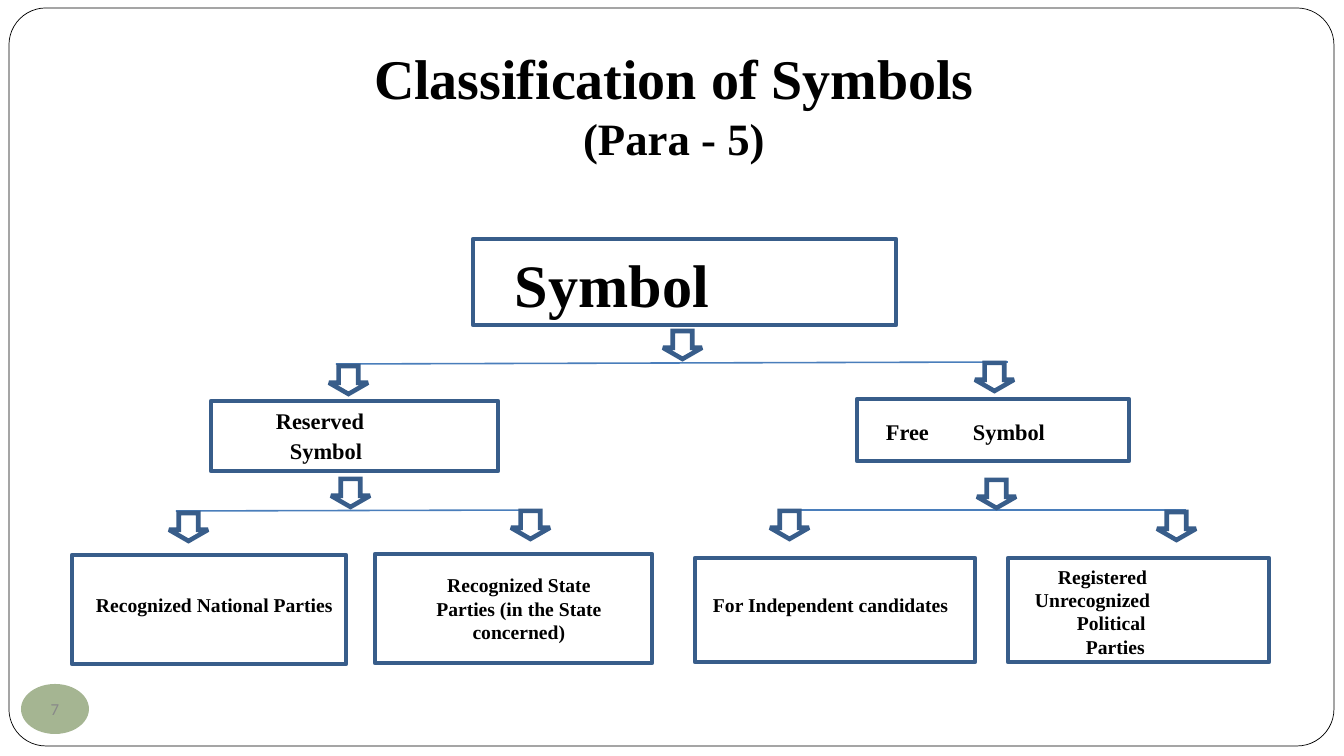
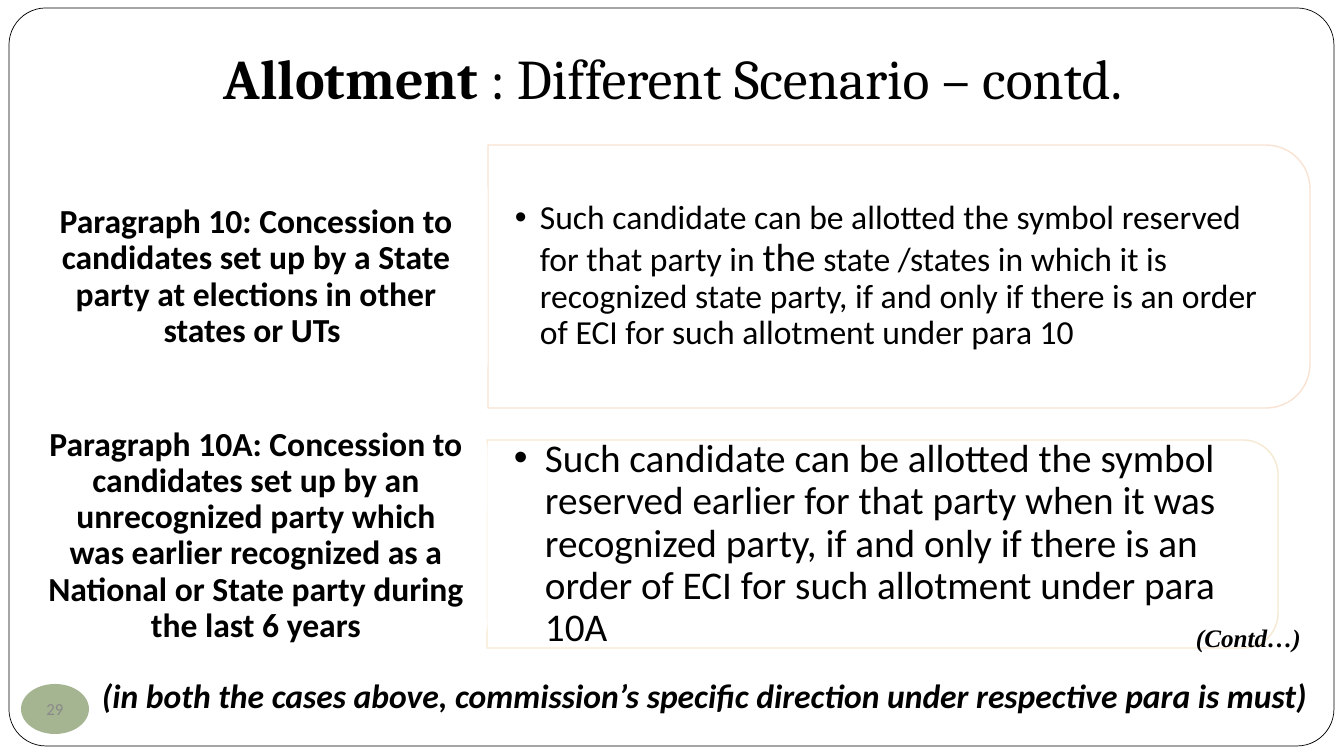
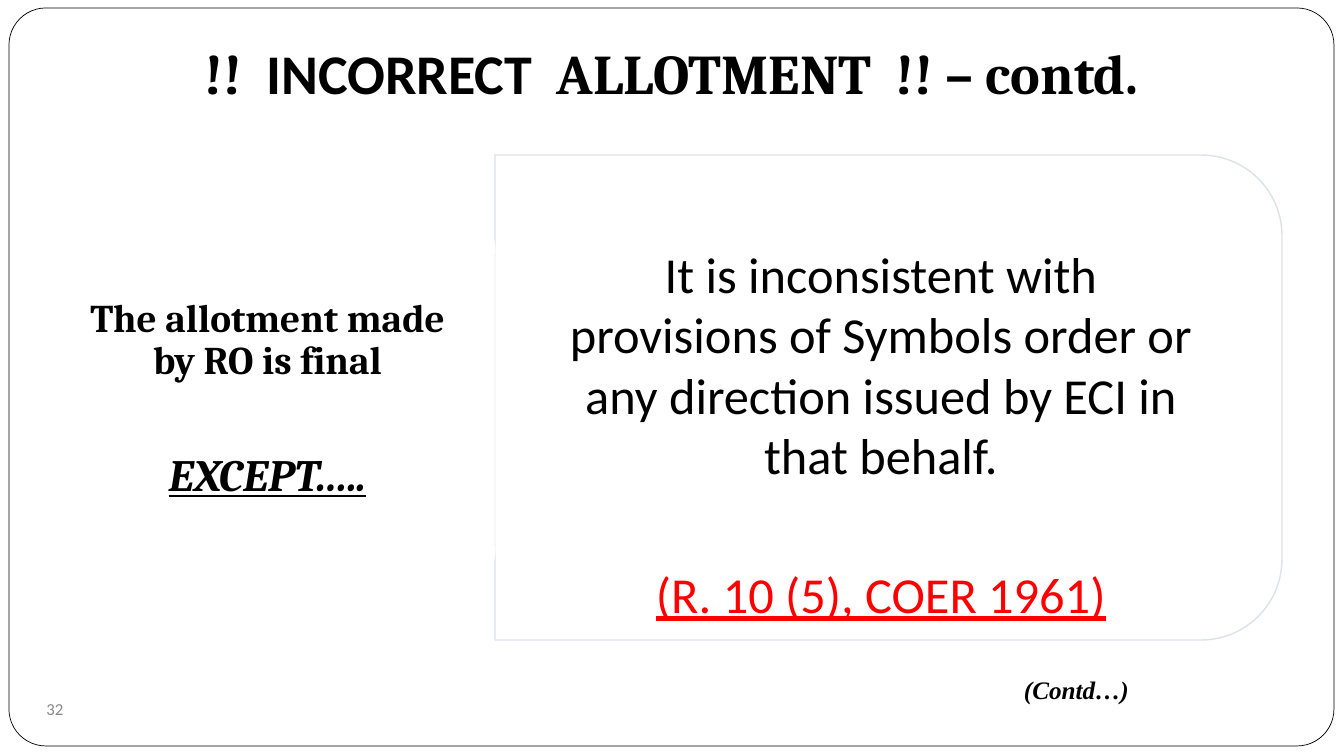
"""Build three slides on the classification and allotment of election symbols."""

from dataclasses import dataclass
from typing import NamedTuple, Optional

from lxml.etree import SubElement
from pptx import Presentation
from pptx.dml.color import RGBColor
from pptx.enum.shapes import MSO_CONNECTOR, MSO_SHAPE
from pptx.enum.text import MSO_ANCHOR, MSO_AUTO_SIZE, PP_ALIGN
from pptx.oxml.ns import qn
from pptx.shapes.autoshape import Shape
from pptx.slide import Slide
from pptx.text.text import TextFrame
from pptx.util import Emu, Pt

EMU_PER_PX = 914400 / 100.8


@dataclass(frozen=True)
class Theme:
    text: str = "000000"
    accent: str = "FF0000"
    number: str = "898989"
    badge: str = "A5B592"
    white: str = "FFFFFF"
    node_line: str = "385D8A"
    branch_line: str = "4A7EBB"
    serif: str = "Times New Roman"
    heading: str = "Cambria"
    body: str = "Calibri"
    title_size: int = 40
    subtitle_size: int = 32
    root_size: int = 43
    statement_size: int = 36
    emphasis_size: int = 32
    large_size: int = 28
    body_size: int = 24
    continued_size: int = 18
    branch_size: int = 16
    leaf_size: int = 14
    number_size: int = 12
    node_width: float = 3.25
    branch_width: float = 1.13
    frame_width: float = 0.5
    panel_width: float = 1


THEME = Theme()


class Box(NamedTuple):
    left: int
    top: int
    width: int
    height: int


class Insets(NamedTuple):
    left: int = 10
    top: int = 5
    right: int = 10
    bottom: int = 5


class Run(NamedTuple):
    text: str
    size: int
    font: str = THEME.body
    bold: bool = False
    italic: bool = False
    underline: bool = False
    color: str = THEME.text


@dataclass(frozen=True)
class Block:
    runs: tuple[Run, ...]
    align: PP_ALIGN = PP_ALIGN.LEFT
    line_spacing: float = 1.0
    before: int = 0
    bullet_indent: int = 0


class Label(NamedTuple):
    text: str
    box: Box
    size: int
    align: PP_ALIGN = PP_ALIGN.LEFT


class Branch(NamedTuple):
    start_x: int
    start_y: int
    end_x: int
    end_y: int


class Scenario(NamedTuple):
    label: str
    label_box: Box
    panel_box: Box
    panel_line: str
    text_box: Box
    indent: int
    runs: tuple[Run, ...]


NO_INSETS = Insets(0, 0, 0, 0)
TITLE_INSETS = Insets(bottom=10)
PANEL_INSETS = Insets(27, 14, 27, 14)
FRAME_BOX = Box(9, 8, 1325, 738)
BADGE_BOX = Box(21, 684, 68, 50)
ARROW_SIZE = (39, 28)

NODES = (
    Box(473, 239, 423, 86),
    Box(211, 401, 287, 70),
    Box(857, 399, 272, 62),
    Box(72, 555, 274, 109),
    Box(375, 554, 277, 109),
    Box(695, 558, 280, 104),
    Box(1008, 558, 261, 104),
)
LABELS = (
    Label("Symbol", Box(515, 247, 220, 73), THEME.root_size),
    Label("Reserved", Box(276, 407, 110, 27), THEME.branch_size),
    Label("Symbol", Box(290, 437, 110, 27), THEME.branch_size),
    Label("Free", Box(886, 418, 60, 27), THEME.branch_size),
    Label("Symbol", Box(973, 418, 110, 27), THEME.branch_size),
    Label("Recognized National Parties", Box(96, 593, 248, 24), THEME.leaf_size),
    Label("Recognized State Parties (in the State concerned)",
          Box(418, 573, 202, 72), THEME.leaf_size, PP_ALIGN.CENTER),
    Label("For Independent candidates", Box(713, 593, 248, 24), THEME.leaf_size),
    Label("Registered", Box(1058, 565, 130, 24), THEME.leaf_size),
    Label("Unrecognized", Box(1035, 588, 130, 24), THEME.leaf_size),
    Label("Political", Box(1077, 611, 130, 24), THEME.leaf_size),
    Label("Parties", Box(1086, 635, 130, 24), THEME.leaf_size),
)
BRANCHES = (
    Branch(336, 364, 1008, 362),
    Branch(176, 511, 540, 510),
    Branch(789, 510, 1186, 510),
)
ARROW_CORNERS = (
    (663, 331), (329, 366), (975, 363), (331, 479), (977, 480),
    (169, 513), (511, 511), (770, 511), (1157, 512),
)

SCENARIOS = (
    Scenario(
        "Paragraph 10: Concession to candidates set up by a State party at "
        "elections in other states or UTs ",
        Box(25, 150, 462, 254), Box(488, 145, 822, 263), "FAE0CF",
        Box(488, 158, 808, 237), 25,
        (
            Run("Such candidate can be allotted the symbol reserved for that party in ",
                THEME.body_size),
            Run("the", THEME.large_size),
            Run(" state /states in which it is recognized state party, if and only "
                "if there is an order of ECI for such allotment under para 10",
                THEME.body_size),
        ),
    ),
    Scenario(
        "Paragraph 10A: Concession to candidates set up by an unrecognized party "
        "which was earlier recognized as a National or State party during the "
        "last 6 years",
        Box(25, 410, 462, 252), Box(487, 440, 791, 208), "F6E7CD",
        Box(487, 451, 780, 187), 31,
        (
            Run("Such candidate can be allotted the symbol reserved earlier for that "
                "party when it was recognized party, if and only if there is an order "
                "of ECI for such allotment under para 10A", THEME.large_size),
        ),
    ),
)


def px(length: float) -> Emu:
    return Emu(round(length * EMU_PER_PX))


def place(box: Box) -> tuple[Emu, Emu, Emu, Emu]:
    return px(box.left), px(box.top), px(box.width), px(box.height)


def write_text(
    text_frame: TextFrame,
    blocks: tuple[Block, ...],
    anchor: MSO_ANCHOR = MSO_ANCHOR.TOP,
    insets: Insets = Insets(),
) -> None:
    text_frame.word_wrap = True
    text_frame.auto_size = MSO_AUTO_SIZE.NONE
    text_frame.vertical_anchor = anchor
    text_frame.margin_left, text_frame.margin_top = px(insets.left), px(insets.top)
    text_frame.margin_right, text_frame.margin_bottom = px(insets.right), px(insets.bottom)
    for index, block in enumerate(blocks):
        paragraph = text_frame.add_paragraph() if index else text_frame.paragraphs[0]
        paragraph.alignment = block.align
        paragraph.line_spacing = block.line_spacing
        paragraph.space_before = Pt(block.before)
        for item in block.runs:
            run = paragraph.add_run()
            run.text = item.text
            run.font.name = item.font
            run.font.size = Pt(item.size)
            run.font.bold = item.bold
            run.font.italic = item.italic
            run.font.underline = item.underline
            run.font.color.rgb = RGBColor.from_string(item.color)
        if block.bullet_indent:
            properties = paragraph._p.get_or_add_pPr()
            properties.set("marL", str(px(block.bullet_indent)))
            properties.set("indent", str(-px(block.bullet_indent)))
            SubElement(properties, qn("a:buFont"), typeface="Arial")
            SubElement(properties, qn("a:buChar"), char="•")


def add_text(
    slide: Slide,
    box: Box,
    blocks: tuple[Block, ...],
    anchor: MSO_ANCHOR = MSO_ANCHOR.TOP,
    insets: Insets = Insets(),
) -> None:
    text_box = slide.shapes.add_textbox(*place(box))
    write_text(text_box.text_frame, blocks, anchor, insets)


def add_outline(
    slide: Slide,
    kind: MSO_SHAPE,
    box: Box,
    line: Optional[str],
    width: float = 1,
    fill: Optional[str] = None,
) -> Shape:
    shape = slide.shapes.add_shape(kind, *place(box))
    shape.shadow.inherit = False
    if fill:
        shape.fill.solid()
        shape.fill.fore_color.rgb = RGBColor.from_string(fill)
    else:
        shape.fill.background()
    if line:
        shape.line.color.rgb = RGBColor.from_string(line)
        shape.line.width = Pt(width)
    else:
        shape.line.fill.background()
    return shape


def add_panel(slide: Slide, box: Box, line: str) -> None:
    center_x, center_y = box.left + box.width / 2, box.top + box.height / 2
    upright = Box(center_x - box.height / 2, center_y - box.width / 2, box.height, box.width)
    panel = add_outline(slide, MSO_SHAPE.ROUND_2_SAME_RECTANGLE, upright, line, THEME.panel_width)
    panel.rotation = 90
    color = panel.element.spPr.find(qn("a:ln")).find(".//" + qn("a:srgbClr"))
    SubElement(color, qn("a:alpha"), val="90000")


def add_side_label(slide: Slide, box: Box, blocks: tuple[Block, ...], insets: Insets) -> None:
    label = add_outline(slide, MSO_SHAPE.ROUNDED_RECTANGLE, box, THEME.white, THEME.panel_width)
    write_text(label.text_frame, blocks, MSO_ANCHOR.MIDDLE, insets)


def add_arrow(slide: Slide, left: int, top: int) -> None:
    arrow = add_outline(
        slide, MSO_SHAPE.DOWN_ARROW, Box(left, top, *ARROW_SIZE), THEME.node_line, THEME.node_width
    )
    arrow.adjustments[0] = 0.5
    arrow.adjustments[1] = 0.4
    SubElement(arrow.element.spPr.find(qn("a:ln")), qn("a:miter"), lim="800000")


def add_branch(slide: Slide, branch: Branch) -> None:
    connector = slide.shapes.add_connector(
        MSO_CONNECTOR.STRAIGHT, *(px(length) for length in branch)
    )
    connector.line.color.rgb = RGBColor.from_string(THEME.branch_line)
    connector.line.width = Pt(THEME.branch_width)
    SubElement(connector.element.spPr, qn("a:effectLst"))


def add_continued(slide: Slide, left: int, top: int) -> None:
    run = Run("(Contd…)", THEME.continued_size, THEME.serif, bold=True, italic=True)
    add_text(slide, Box(left, top, 140, 40), (Block((run,)),))


def add_badge(slide: Slide, number: str, fill: Optional[str]) -> None:
    badge = add_outline(slide, MSO_SHAPE.OVAL, BADGE_BOX, None, fill=fill)
    run = Run(number, THEME.number_size, color=THEME.number)
    write_text(
        badge.text_frame, (Block((run,), PP_ALIGN.CENTER),), MSO_ANCHOR.MIDDLE, NO_INSETS
    )


def add_slide(
    presentation: Presentation,
    title_box: Box,
    title_lines: tuple[tuple[Run, ...], ...],
    anchor: MSO_ANCHOR,
) -> Slide:
    slide = presentation.slides.add_slide(presentation.slide_layouts[5])
    title = slide.shapes.title
    title.left, title.top, title.width, title.height = place(title_box)
    blocks = tuple(Block(runs, PP_ALIGN.CENTER) for runs in title_lines)
    write_text(title.text_frame, blocks, anchor, TITLE_INSETS)
    return slide


def move_frame_to_master(presentation: Presentation, slide: Slide) -> None:
    frame = add_outline(
        slide, MSO_SHAPE.ROUNDED_RECTANGLE, FRAME_BOX, THEME.text, THEME.frame_width, THEME.white
    )
    frame.adjustments[0] = 0.05
    presentation.slide_master.element.cSld.spTree.insert(2, frame.element)


def build_classification(presentation: Presentation) -> Slide:
    title = (
        (Run("Classification of Symbols", THEME.title_size, THEME.serif, bold=True),),
        (Run("(Para - 5)", THEME.subtitle_size, THEME.serif, bold=True),),
    )
    slide = add_slide(presentation, Box(72, 50, 1204, 124), title, MSO_ANCHOR.BOTTOM)
    add_badge(slide, "7", THEME.badge)
    for node in NODES:
        add_outline(slide, MSO_SHAPE.RECTANGLE, node, THEME.node_line, THEME.node_width)
    for label in LABELS:
        run = Run(label.text, label.size, THEME.serif, bold=True)
        add_text(slide, label.box, (Block((run,), label.align),), insets=NO_INSETS)
    for branch in BRANCHES:
        add_branch(slide, branch)
    for left, top in ARROW_CORNERS:
        add_arrow(slide, left, top)
    return slide


def build_scenarios(presentation: Presentation) -> None:
    title = ((
        Run("Allotment", THEME.title_size, THEME.heading, bold=True),
        Run(" : Different Scenario – contd.", THEME.title_size, THEME.heading),
    ),)
    slide = add_slide(presentation, Box(30, 20, 1286, 119), title, MSO_ANCHOR.MIDDLE)
    for scenario in SCENARIOS:
        add_panel(slide, scenario.panel_box, scenario.panel_line)
        bullet = Block(scenario.runs, line_spacing=0.9, bullet_indent=scenario.indent)
        add_text(slide, scenario.text_box, (bullet,), MSO_ANCHOR.MIDDLE, PANEL_INSETS)
        label = Run(scenario.label, THEME.body_size, bold=True)
        add_side_label(
            slide, scenario.label_box, (Block((label,), PP_ALIGN.CENTER, 0.9),), Insets()
        )
    note = Run(
        "(in both the cases above, commission’s specific direction under respective para is must)",
        THEME.body_size, bold=True, italic=True,
    )
    add_text(slide, Box(92, 670, 1252, 51), (Block((note,)),))
    add_badge(slide, "29", THEME.badge)
    add_continued(slide, 1186, 617)


def build_incorrect_allotment(presentation: Presentation) -> None:
    title = ((
        Run("!!  ", THEME.title_size, THEME.heading, bold=True),
        Run("INCORRECT", THEME.title_size, THEME.body, bold=True),
        Run("  ALLOTMENT  !! – contd.", THEME.title_size, THEME.heading, bold=True),
    ),)
    slide = add_slide(presentation, Box(40, 29, 1263, 92), title, MSO_ANCHOR.MIDDLE)
    add_panel(slide, Box(495, 155, 787, 485), "D8DFE9")
    final = Run("The allotment made by RO is final", THEME.large_size, THEME.heading, bold=True)
    exception = Run("EXCEPT…..", THEME.emphasis_size, THEME.heading, True, True, True)
    label_blocks = (
        Block((final,), PP_ALIGN.CENTER, 0.9),
        Block((exception,), PP_ALIGN.CENTER, 0.9, before=50),
    )
    add_side_label(slide, Box(40, 181, 455, 438), label_blocks, Insets(12, 6, 12, 6))
    reason = Run(
        "It is inconsistent with provisions of Symbols order or any direction issued by "
        "ECI in that behalf.", THEME.statement_size,
    )
    rule = Run("(R. 10 (5), COER 1961)", THEME.statement_size, underline=True, color=THEME.accent)
    reason_blocks = (
        Block((reason,), PP_ALIGN.CENTER, before=6),
        Block((rule,), PP_ALIGN.CENTER, before=56),
    )
    add_text(slide, Box(545, 238, 672, 393), reason_blocks)
    add_badge(slide, "32", None)
    add_continued(slide, 1014, 669)


def main() -> None:
    presentation = Presentation()
    presentation.slide_width, presentation.slide_height = px(1344), px(756)
    first_slide = build_classification(presentation)
    move_frame_to_master(presentation, first_slide)
    build_scenarios(presentation)
    build_incorrect_allotment(presentation)
    presentation.save("out.pptx")


if __name__ == "__main__":
    main()
